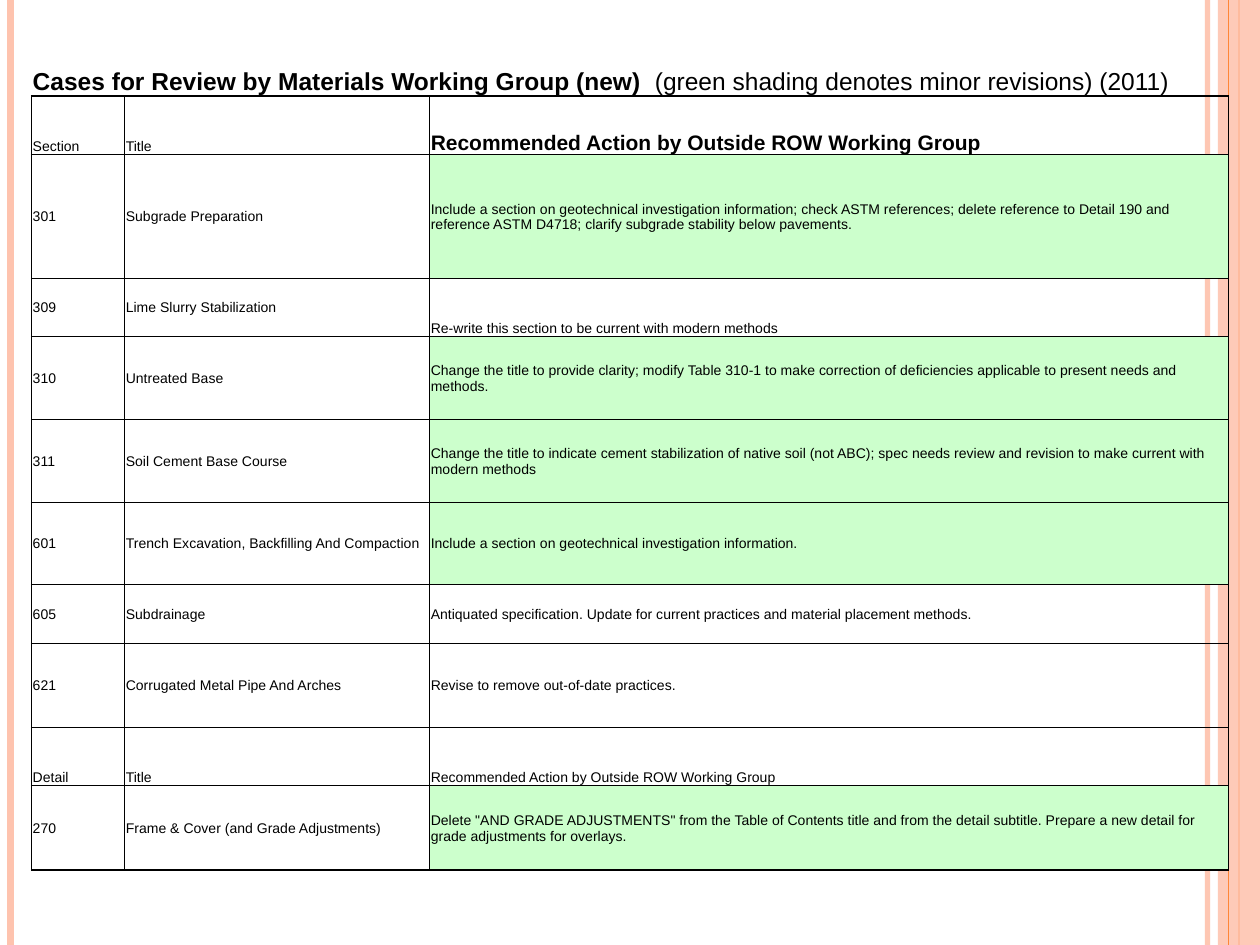
from lxml.etree import SubElement
from pptx import Presentation
from pptx.dml.color import RGBColor
from pptx.enum.shapes import MSO_CONNECTOR, MSO_SHAPE
from pptx.enum.text import MSO_ANCHOR
from pptx.oxml.ns import qn
from pptx.util import Pt

# Content: row height, anchor, texts, shaded action
SHORT, MEDIUM, TALL = 33.3, 47.3, 70.8
LAST = 48.3
BOTTOM, MIDDLE = MSO_ANCHOR.BOTTOM, MSO_ANCHOR.MIDDLE
ACTION = "Recommended Action by Outside ROW Working Group"
CAPTION = [
    ("Cases for Review by Materials Working Group (new) ", True),
    (" (green shading denotes minor revisions) (2011)", False),
]
ROWS = [
    (SHORT, BOTTOM, "Section", "Title", ACTION, False),
    (TALL, MIDDLE, "301", "Subgrade Preparation",
     "Include a section on geotechnical investigation information; check ASTM references; "
     "delete reference to Detail 190 and reference ASTM D4718; clarify subgrade stability "
     "below pavements.", True),
    (SHORT, MIDDLE, "309", "Lime Slurry Stabilization",
     "Re-write this section to be current with modern methods", False),
    (MEDIUM, MIDDLE, "310", "Untreated Base",
     "Change the title to provide clarity; modify Table 310-1 to make correction of "
     "deficiencies applicable to present needs and methods.", True),
    (MEDIUM, MIDDLE, "311", "Soil Cement Base Course",
     "Change the title to indicate cement stabilization of native soil (not ABC); spec needs "
     "review and revision to make current with modern methods", True),
    (MEDIUM, MIDDLE, "601", "Trench Excavation, Backfilling And Compaction",
     "Include a section on geotechnical investigation information.", True),
    (SHORT, MIDDLE, "605", "Subdrainage",
     "Antiquated specification. Update for current practices and material placement methods.",
     False),
    (LAST, MIDDLE, "621", "Corrugated Metal Pipe And Arches",
     "Revise to remove out-of-date practices.", False),
    (SHORT, BOTTOM, "Detail", "Title", ACTION, False),
    (LAST, MIDDLE, "270", "Frame & Cover (and Grade Adjustments)",
     'Delete "AND GRADE ADJUSTMENTS" from the Table of Contents title and from the detail '
     "subtitle. Prepare a new detail for grade adjustments for overlays.", True),
]

# Layout and format values
PAGE_WIDTH, PAGE_HEIGHT = 720, 540
LEFT, TOP, CAPTION_HEIGHT = 18, 30.2, 24.8
COLUMNS = [53.2, 174.3, 456.5]
MARGINS = {"margin_left": Pt(0.72), "margin_right": Pt(0.72),
           "margin_top": Pt(0.72), "margin_bottom": Pt(0)}
BLACK, GREEN, PEACH, ORANGE = "000000", "CCFFCC", "FEC3AE", "FE8637"
THIN, THICK = 0.5, 1
RULES_BEHIND = [(690, PEACH, 3, 93), (6, PEACH, 4.5, 100), (708, ORANGE, 1.5, 100)]
RULES_FRONT = [(702, ORANGE, 0.75, 100)]


def color(code):
    return RGBColor.from_string(code)


def set_opacity(properties, percent):
    fill_color = next(properties.iter(qn("a:srgbClr")))
    SubElement(fill_color, qn("a:alpha"), val=str(percent * 1000))


def add_rules(page, rules):
    for x, code, width, opacity in rules:
        rule = page.shapes.add_connector(
            MSO_CONNECTOR.STRAIGHT, Pt(x), Pt(0), Pt(x), Pt(PAGE_HEIGHT))
        rule.line.color.rgb = color(code)
        rule.line.width = Pt(width)
        properties = rule._element.spPr
        if opacity < 100:
            set_opacity(properties, opacity)
        SubElement(properties, qn("a:effectLst"))


def set_borders(cell, left, right, top, bottom):
    properties = cell._tc.get_or_add_tcPr()
    for side, width in zip("LRTB", (left, right, top, bottom)):
        border = SubElement(properties, qn(f"a:ln{side}"), w=str(Pt(width)))
        if width:
            fill = SubElement(border, qn("a:solidFill"))
            SubElement(fill, qn("a:srgbClr"), val=BLACK)
        else:
            SubElement(border, qn("a:noFill"))


def fill_cell(cell, spans, size, anchor, borders, shaded=False):
    set_borders(cell, *borders)
    if shaded:
        cell.fill.solid()
        cell.fill.fore_color.rgb = color(GREEN)
    else:
        cell.fill.background()
    for name, value in {**MARGINS, "vertical_anchor": anchor}.items():
        setattr(cell, name, value)
    para = cell.text_frame.paragraphs[0]
    for text, bold in spans:
        span = para.add_run()
        span.text = text
        for name, value in {"name": "Arial", "size": Pt(size), "bold": bold}.items():
            setattr(span.font, name, value)
        span.font.color.rgb = color(BLACK)


def add_cases(page):
    heights = [CAPTION_HEIGHT] + [row[0] for row in ROWS]
    table = page.shapes.add_table(
        len(heights), len(COLUMNS), Pt(LEFT), Pt(TOP),
        Pt(sum(COLUMNS)), Pt(sum(heights))).table
    table.first_row = table.horz_banding = False
    for column, width in zip(table.columns, COLUMNS):
        column.width = Pt(width)
    for row, height in zip(table.rows, heights):
        row.height = Pt(height)

    # Caption across all columns
    table.cell(0, 0).merge(table.cell(0, 2))
    for index in range(3):
        fill_cell(table.cell(0, index), CAPTION if index == 0 else [], 14, BOTTOM,
                  (0, 0, 0, THICK))

    # Each section, headed by its bottom-aligned row, has a thick outline
    for index, (_, anchor, *texts, shaded) in enumerate(ROWS):
        is_end = index + 1 == len(ROWS) or ROWS[index + 1][1] == BOTTOM
        top = THICK if anchor == BOTTOM else THIN
        bottom = THICK if is_end else THIN
        for place, text in enumerate(texts):
            is_action = place == 2
            is_heading = is_action and index == 0
            low = is_action and texts[0] == "309"
            borders = (THIN if place else THICK, THICK if is_action else THIN, top, bottom)
            fill_cell(table.cell(index + 1, place), [(text, is_heading)],
                      12 if is_heading else 8, BOTTOM if low else anchor,
                      borders, shaded and is_action)


def main():
    deck = Presentation()
    deck.slide_width, deck.slide_height = Pt(PAGE_WIDTH), Pt(PAGE_HEIGHT)
    page = deck.slides.add_slide(deck.slide_layouts[6])

    # Edge stripes
    add_rules(page, RULES_BEHIND)
    band = page.shapes.add_shape(
        MSO_SHAPE.RECTANGLE, Pt(696), Pt(0), Pt(24), Pt(PAGE_HEIGHT))
    band.shadow.inherit = False
    band.fill.solid()
    band.fill.fore_color.rgb = color(PEACH)
    set_opacity(band._element.spPr, 87)
    band.line.fill.background()
    add_rules(page, RULES_FRONT)

    add_cases(page)
    deck.save("out.pptx")


if __name__ == "__main__":
    main()
